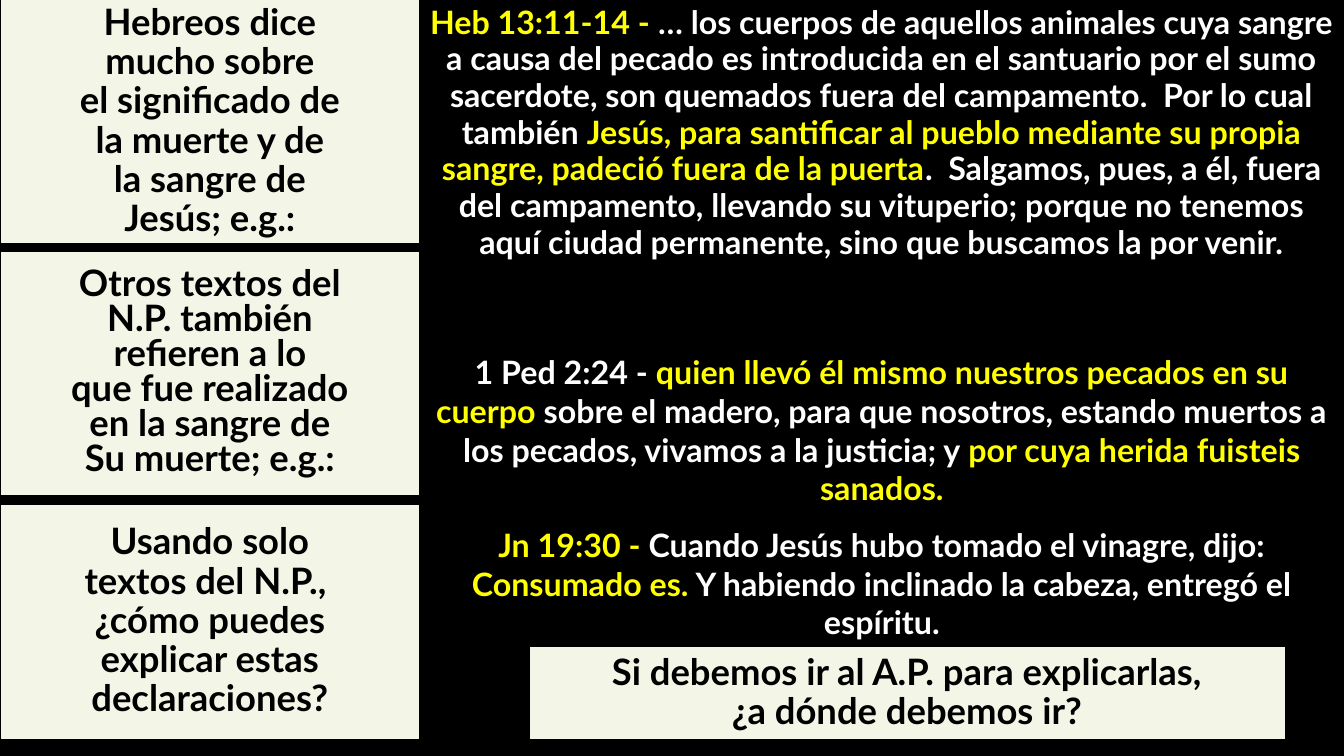
from pptx import Presentation
from pptx.dml.color import RGBColor
from pptx.enum.shapes import MSO_SHAPE as Form
from pptx.enum.text import MSO_ANCHOR as Anchor, MSO_AUTO_SIZE as Fit, PP_ALIGN as Align
from pptx.util import Inches, Pt

COLS, ROWS = 160, 90
BLACK, WHITE, GOLD, CREAM = "000000", "FFFFFF", "FFFF00", "F3F6E6"


def tint(code):
    return RGBColor.from_string(code)


class Deck:
    """Holds the style and the current slide; places are grid columns and rows."""

    font = "Lato"
    card_size, verse_size = 26, 23

    def __init__(self):
        self.prs = Presentation()
        self.prs.slide_width, self.prs.slide_height = Inches(13.33), Inches(7.5)
        self.slide = self.prs.slides.add_slide(self.prs.slide_layouts[6])
        fill = self.slide.background.fill
        fill.solid()
        fill.fore_color.rgb = tint(BLACK)

    def place(self, col, row, wide, high):
        across, down = self.prs.slide_width / COLS, self.prs.slide_height / ROWS
        return [round(n) for n in (col * across, row * down, wide * across, high * down)]

    def put_text(self, frame, paras, size, pitch, gap=0):
        """Fill a frame with paragraphs, each a list of (text, colour) runs."""
        for i, runs in enumerate(paras):
            para = frame.add_paragraph() if i else frame.paragraphs[0]
            para.alignment = Align.CENTER
            para.line_spacing = pitch
            para.space_before = Pt(gap if i else 0)
            for text, color in runs:
                run = para.add_run()
                run.text = text
                font = run.font
                font.name, font.size, font.bold = self.font, Pt(size), True
                font.color.rgb = tint(color)

    def card(self, spot, lines, pitch=0.9):
        box = self.slide.shapes.add_shape(Form.RECTANGLE, *self.place(*spot))
        box.shadow.inherit = False
        box.fill.solid()
        box.fill.fore_color.rgb = tint(CREAM)
        box.line.color.rgb = tint(BLACK)
        box.line.width = Pt(0.75)
        frame = box.text_frame
        frame.word_wrap = False
        frame.vertical_anchor = Anchor.MIDDLE
        self.put_text(frame, [[(line, BLACK)] for line in lines], self.card_size, pitch)

    def verse(self, spot, paras, pitch=1.0, gap=0):
        frame = self.slide.shapes.add_textbox(*self.place(*spot)).text_frame
        frame.word_wrap = True
        frame.auto_size = Fit.SHAPE_TO_FIT_TEXT
        self.put_text(frame, paras, self.verse_size, pitch, gap)


def main():
    deck = Deck()
    side = 50
    main_w = COLS - side

    deck.verse((side, 0, main_w, 41), [[
        ("Heb 13:11-14 - ", GOLD),
        ("… los cuerpos de aquellos animales cuya sangre a causa del pecado es "
         "introducida en el santuario por el sumo sacerdote, son quemados fuera "
         "del campamento.  Por lo cual también ", WHITE),
        ("Jesús, para santificar al pueblo mediante su propia sangre, padeció "
         "fuera de la puerta", GOLD),
        (".  Salgamos, pues, a él, fuera del campamento, llevando su vituperio; "
         "porque no tenemos aquí ciudad permanente, sino que buscamos la por venir.",
         WHITE),
    ]], pitch=0.95)

    deck.verse((side, 41.4, main_w, 36.2), [
        [
            ("1 Ped 2:24 - ", WHITE),
            ("quien llevó él mismo nuestros pecados en su cuerpo", GOLD),
            (" sobre el madero, para que nosotros, estando muertos a los pecados, "
             "vivamos a la justicia; y ", WHITE),
            ("por cuya herida fuisteis sanados.", GOLD),
        ],
        [
            ("Jn 19:30 - ", GOLD),
            ("Cuando Jesús hubo tomado el vinagre, dijo: ", WHITE),
            ("Consumado es.", GOLD),
            (" Y habiendo inclinado la cabeza, entregó el espíritu.", WHITE),
        ],
    ], gap=13)

    cards = [
        (29, 0.9, ["Hebreos dice", "mucho sobre", "el significado de",
                   "la muerte y de", "la sangre de", "Jesús; e.g.:"]),
        (29, 0.8, ["Otros textos del", "N.P. también", "refieren a lo",
                   "que fue realizado", "en la sangre de", "Su muerte; e.g.:"]),
        (28, 0.9, ["Usando solo", "textos del N.P., ", "¿cómo puedes",
                   "explicar estas", "declaraciones?"]),
    ]
    for i, (high, pitch, lines) in enumerate(cards):
        deck.card((0, i * ROWS / 3, side, high), lines, pitch)

    deck.card((63, 77, 90, 11),
              ["Si debemos ir al A.P. para explicarlas,", "¿a dónde debemos ir?"])

    deck.prs.save("out.pptx")


if __name__ == "__main__":
    main()
